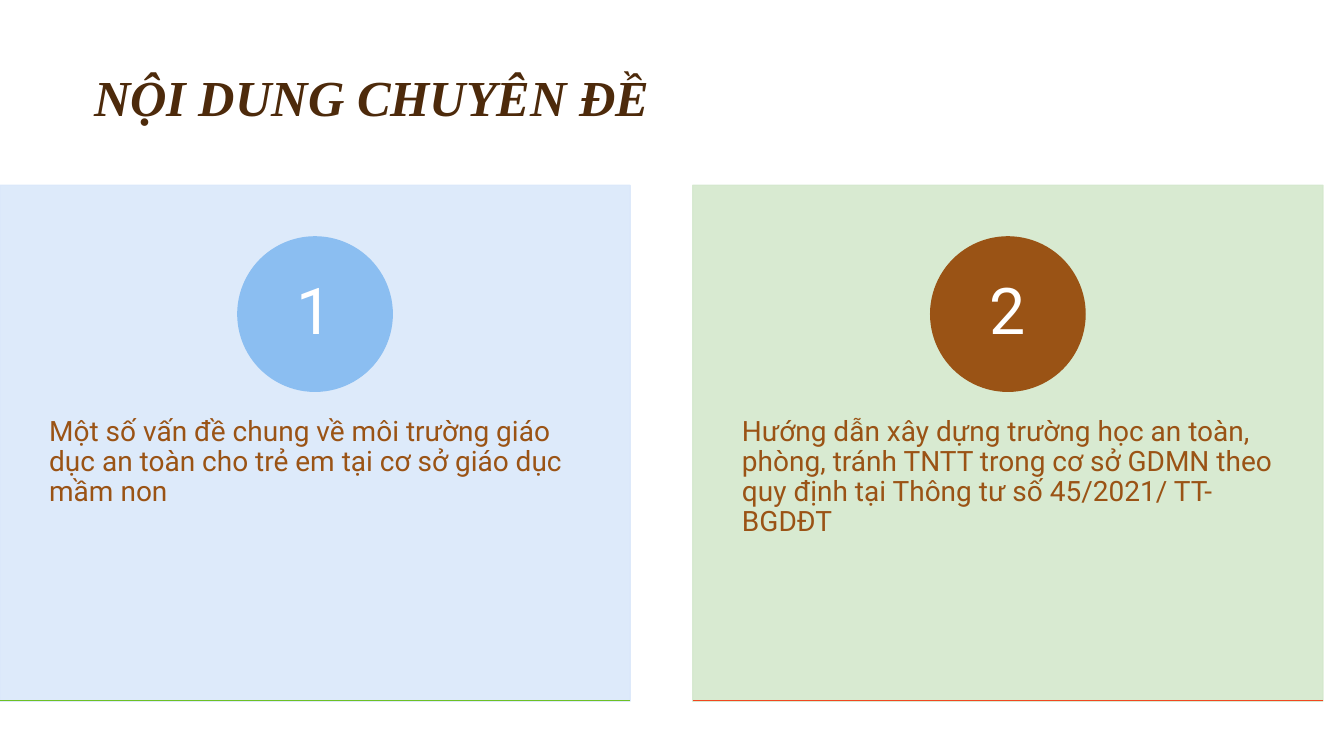
"""Build the slide that lists the two topics of the training course."""
from dataclasses import dataclass

from lxml import etree
from pptx import Presentation
from pptx.dml.color import RGBColor
from pptx.enum.shapes import MSO_CONNECTOR, MSO_SHAPE
from pptx.enum.text import MSO_ANCHOR, PP_ALIGN
from pptx.oxml.ns import qn
from pptx.shapes.autoshape import Shape
from pptx.slide import Slide
from pptx.util import Cm, Pt

RECTANGLE, OVAL = MSO_SHAPE.RECTANGLE, MSO_SHAPE.OVAL
STRAIGHT = MSO_CONNECTOR.STRAIGHT
TOP, MIDDLE, BOTTOM = MSO_ANCHOR.TOP, MSO_ANCHOR.MIDDLE, MSO_ANCHOR.BOTTOM
LEFT, CENTER = PP_ALIGN.LEFT, PP_ALIGN.CENTER

PANEL_TOP, PANEL_WIDTH, PANEL_HEIGHT = 4.67, 15.88, 13.0
PANEL_STEP = 17.46
CIRCLE_TOP, CIRCLE_SIZE = 5.97, 3.89
NUMBER_SIZE = 2.77
BODY_TOP, BODY_HEIGHT = 9.6, 7.8
BASELINE = 17.65


@dataclass(frozen=True)
class Theme:
    """Colours, fonts and type sizes of the slide."""
    title_color: str = "4D2A0B"
    body_color: str = "9A5315"
    number_color: str = "FFFFFF"
    title_font: str = "Times New Roman"
    body_font: str = "Roboto"
    title_size: float = 36
    body_size: float = 20
    number_size: float = 46
    line_spacing: float = 0.9
    line_width: float = 1
    panel_opacity: int = 90


@dataclass(frozen=True)
class Topic:
    """One numbered topic with the colours of its panel."""
    text: str
    panel: str
    circle: str
    baseline: str


@dataclass(frozen=True)
class Area:
    """A rectangle on the slide, in centimetres."""
    left: float
    top: float
    width: float
    height: float

    def lengths(self) -> tuple[Cm, Cm, Cm, Cm]:
        """Return left, top, width and height as lengths."""
        return Cm(self.left), Cm(self.top), Cm(self.width), Cm(self.height)


THEME = Theme()
TOPICS = (
    Topic("Một số vấn đề chung về môi trường giáo dục an toàn cho trẻ em "
          "tại cơ sở giáo dục mầm non", "DAE8FA", "8BBEF1", "6DC025"),
    Topic("Hướng dẫn xây dựng trường học an toàn, phòng, tránh TNTT trong "
          "cơ sở GDMN theo quy định tại Thông tư số 45/2021/ TT-BGDĐT",
          "D4E8CD", "9A5315", "F1471F"),
)


def add_text(page: Slide, area: Area, text: str, *, font: str, size: float,
             color: str, insets: tuple[float, float, float, float],
             anchor: MSO_ANCHOR = TOP, align: PP_ALIGN = LEFT,
             bold: bool = False, italic: bool = False) -> None:
    """Add a wrapped text box; insets run left, top, right, bottom."""
    frame = page.shapes.add_textbox(*area.lengths()).text_frame
    frame.word_wrap = True
    frame.vertical_anchor = anchor
    (frame.margin_left, frame.margin_top,
     frame.margin_right, frame.margin_bottom) = map(Cm, insets)
    para = frame.paragraphs[0]
    para.alignment = align
    para.line_spacing = THEME.line_spacing
    span = para.add_run()
    span.text = text
    span.font.name = font
    span.font.size = Pt(size)
    span.font.bold = bold
    span.font.italic = italic
    span.font.color.rgb = RGBColor.from_string(color)


def add_solid(page: Slide, kind: MSO_SHAPE, area: Area, color: str,
              opacity: int = 100) -> Shape:
    """Add a shape whose fill and outline share a colour and opacity."""
    shape = page.shapes.add_shape(kind, *area.lengths())
    shape.shadow.inherit = False
    shape.fill.solid()
    shape.fill.fore_color.rgb = RGBColor.from_string(color)
    shape.line.color.rgb = RGBColor.from_string(color)
    shape.line.width = Pt(THEME.line_width)
    if opacity < 100:
        for tint in shape._element.spPr.iter(qn("a:srgbClr")):
            etree.SubElement(tint, qn("a:alpha"), val=str(opacity * 1000))
    return shape


def add_baseline(page: Slide, left: float, color: str) -> None:
    """Add the coloured line along the foot of a panel."""
    line = page.shapes.add_connector(
        STRAIGHT, Cm(left), Cm(BASELINE), Cm(left + PANEL_WIDTH), Cm(BASELINE))
    line.line.color.rgb = RGBColor.from_string(color)
    line.line.width = Pt(THEME.line_width)
    etree.SubElement(line._element.spPr, qn("a:effectLst"))


def add_topic(page: Slide, index: int, topic: Topic) -> None:
    """Add the panel, text, numbered circle and baseline of a topic."""
    left = index * PANEL_STEP
    circle_left = left + (PANEL_WIDTH - CIRCLE_SIZE) / 2
    number_gap = (CIRCLE_SIZE - NUMBER_SIZE) / 2
    add_solid(page, RECTANGLE, Area(left, PANEL_TOP, PANEL_WIDTH, PANEL_HEIGHT),
              topic.panel, THEME.panel_opacity)
    add_text(page, Area(left, BODY_TOP, PANEL_WIDTH, BODY_HEIGHT), topic.text,
             font=THEME.body_font, size=THEME.body_size,
             color=THEME.body_color, insets=(1.24, 0.91, 1.24, 0.91))
    add_solid(page, OVAL,
              Area(circle_left, CIRCLE_TOP, CIRCLE_SIZE, CIRCLE_SIZE),
              topic.circle)
    add_text(page, Area(circle_left + number_gap, CIRCLE_TOP + number_gap,
                        NUMBER_SIZE, NUMBER_SIZE), str(index + 1),
             font=THEME.body_font, size=THEME.number_size,
             color=THEME.number_color, insets=(0.3, 0.03, 0.3, 0.03),
             anchor=MIDDLE, align=CENTER)
    add_baseline(page, left, topic.baseline)


def main() -> None:
    """Build the deck and save it."""
    deck = Presentation()
    deck.slide_width, deck.slide_height = Cm(33.87), Cm(19.05)
    page = deck.slides.add_slide(deck.slide_layouts[6])
    add_text(page, Area(2.12, 0.9, 29.63, 3.75), "NỘI DUNG CHUYÊN ĐỀ",
             font=THEME.title_font, size=THEME.title_size,
             color=THEME.title_color, insets=(0.25, 0.13, 0.25, 1.63),
             anchor=BOTTOM, bold=True, italic=True)
    for index, topic in enumerate(TOPICS):
        add_topic(page, index, topic)
    deck.save("out.pptx")


if __name__ == "__main__":
    main()
